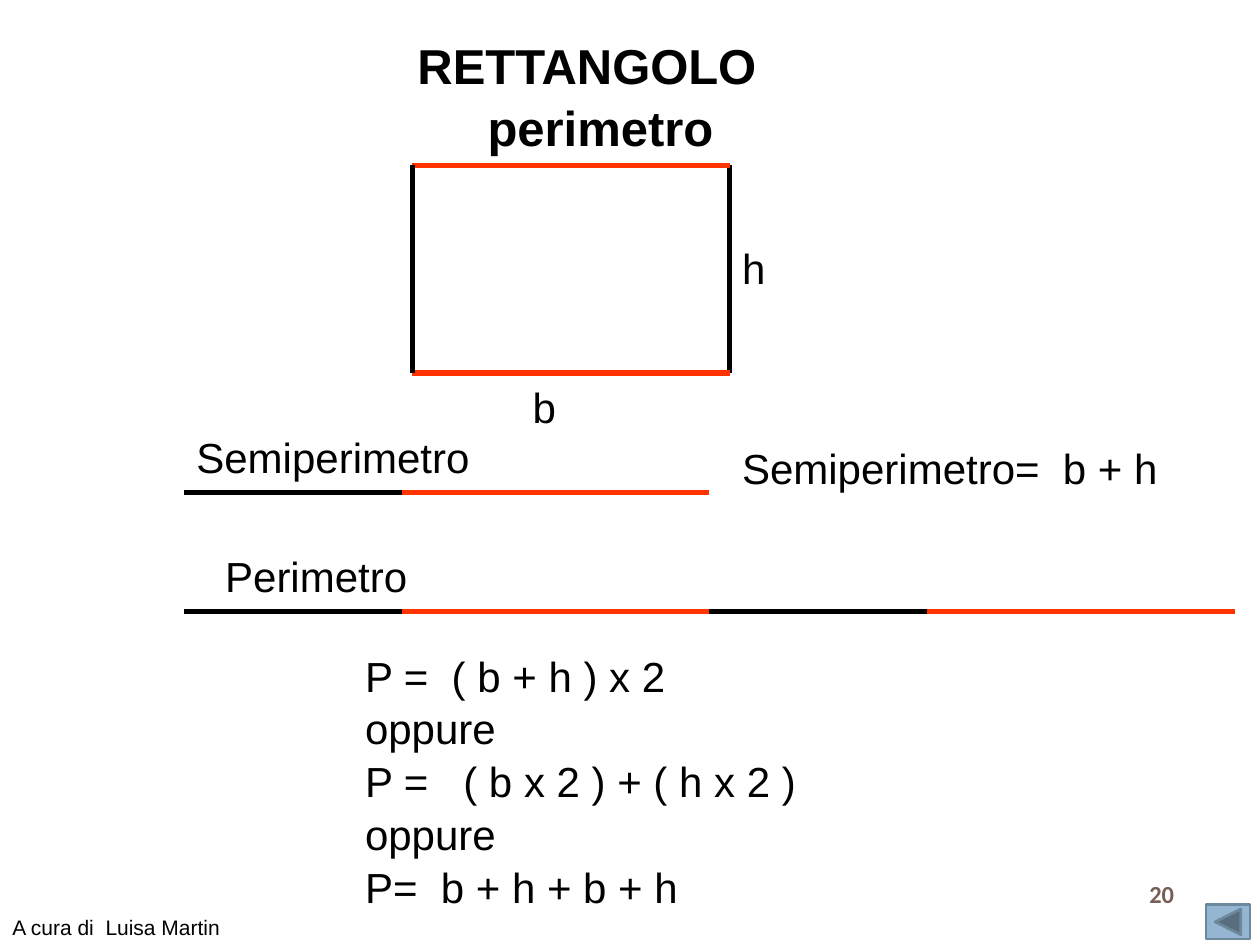
from lxml import etree
from pptx import Presentation
from pptx import util as u
from pptx.dml.color import RGBColor
from pptx.enum import shapes, text
from pptx.oxml.ns import qn

BLACK, RED = "000000", "FF3300"


def paint(color_format, hex_color):
    color_format.rgb = RGBColor.from_string(hex_color)


def write(box, words, size, color=BLACK, font="Arial", bold=False, align=text.PP_ALIGN.LEFT):
    frame = box.text_frame
    frame.word_wrap = True
    frame.auto_size = text.MSO_AUTO_SIZE.NONE
    frame.vertical_anchor = text.MSO_ANCHOR.TOP
    frame.text = words
    paragraph = frame.paragraphs[0]
    paragraph.alignment = align
    paragraph.line_spacing = 1.05
    paragraph.font.name = font
    paragraph.font.size = u.Pt(size)
    paragraph.font.bold = bold
    paint(paragraph.font.color, color)
    return frame


deck = Presentation()
deck.slide_width, deck.slide_height = u.Cm(25.4), u.Cm(19.05)
slide = deck.slides.add_slide(deck.slide_layouts[5])

heading = slide.shapes.title
heading.left, heading.top = u.Cm(6.91), u.Cm(0.53)
heading.width, heading.height = u.Cm(10.39), u.Cm(2.64)
write(heading, "RETTANGOLO  \vperimetro", 28, bold=True, align=text.PP_ALIGN.CENTER)

left, right, top, bottom = 8.31, 14.71, 3.33, 7.52
segments = [
    (right, top, right, bottom, BLACK),
    (left, top, right, top, RED),
    (left, bottom, right, bottom, RED),
    (left, top, left, bottom, BLACK),
]

height_length, base_length = 4.39, 6.2
for level, pairs in [(9.93, 1), (12.32, 2)]:
    start = 3.71
    for length, color in [(height_length, BLACK), (base_length, RED)] * pairs:
        segments.append((start, level, start + length, level, color))
        start += length

for x1, y1, x2, y2, color in segments:
    segment = slide.shapes.add_connector(
        shapes.MSO_CONNECTOR.STRAIGHT, u.Cm(x1), u.Cm(y1), u.Cm(x2), u.Cm(y2))
    segment.line.width = u.Pt(3)
    paint(segment.line.color, color)
    etree.SubElement(segment._element.spPr, qn("a:effectLst"))

formulas = "\v".join([
    "P =  ( b + h ) x 2",
    "oppure",
    "P =   ( b x 2 ) + ( h x 2 )",
    "oppure",
    "P=  b + h + b + h",
])
labels = [
    ("Semiperimetro=  b + h", 14.71, 8.74, 9.4, 1.3, 24),
    ("Semiperimetro", 3.71, 8.53, 7.21, 1.27, 24),
    ("Perimetro", 4.29, 10.92, 4.19, 1.27, 24),
    (formulas, 7.11, 12.93, 10.39, 5.38, 24),
    ("b", 10.49, 7.52, 1.19, 1.27, 24),
    ("h", 14.71, 4.72, 0.99, 1.27, 24),
    ("A cura di  Luisa Martin", 0, 18.29, 4.8, 0.76, 12),
]
for words, x, y, width, height, size in labels:
    label = slide.shapes.add_textbox(u.Cm(x), u.Cm(y), u.Cm(width), u.Cm(height))
    write(label, words, size)

page_number = slide.shapes.add_textbox(u.Cm(22.71), u.Cm(17.35), u.Cm(1.42), u.Cm(1.32))
page_frame = write(page_number, "20", 14, "775F55", "Calibri", True, text.PP_ALIGN.CENTER)
page_frame.vertical_anchor = text.MSO_ANCHOR.MIDDLE

back_button = slide.shapes.add_shape(
    shapes.MSO_SHAPE.ACTION_BUTTON_BACK_OR_PREVIOUS,
    u.Cm(24.31), u.Cm(18.24), u.Cm(0.89), u.Cm(0.69))
back_button.shadow.inherit = False
back_button.fill.solid()
paint(back_button.fill.fore_color, "94B6D2")
paint(back_button.line.color, "6D879B")
back_button.line.width = u.Pt(1.5)

deck.save("out.pptx")
